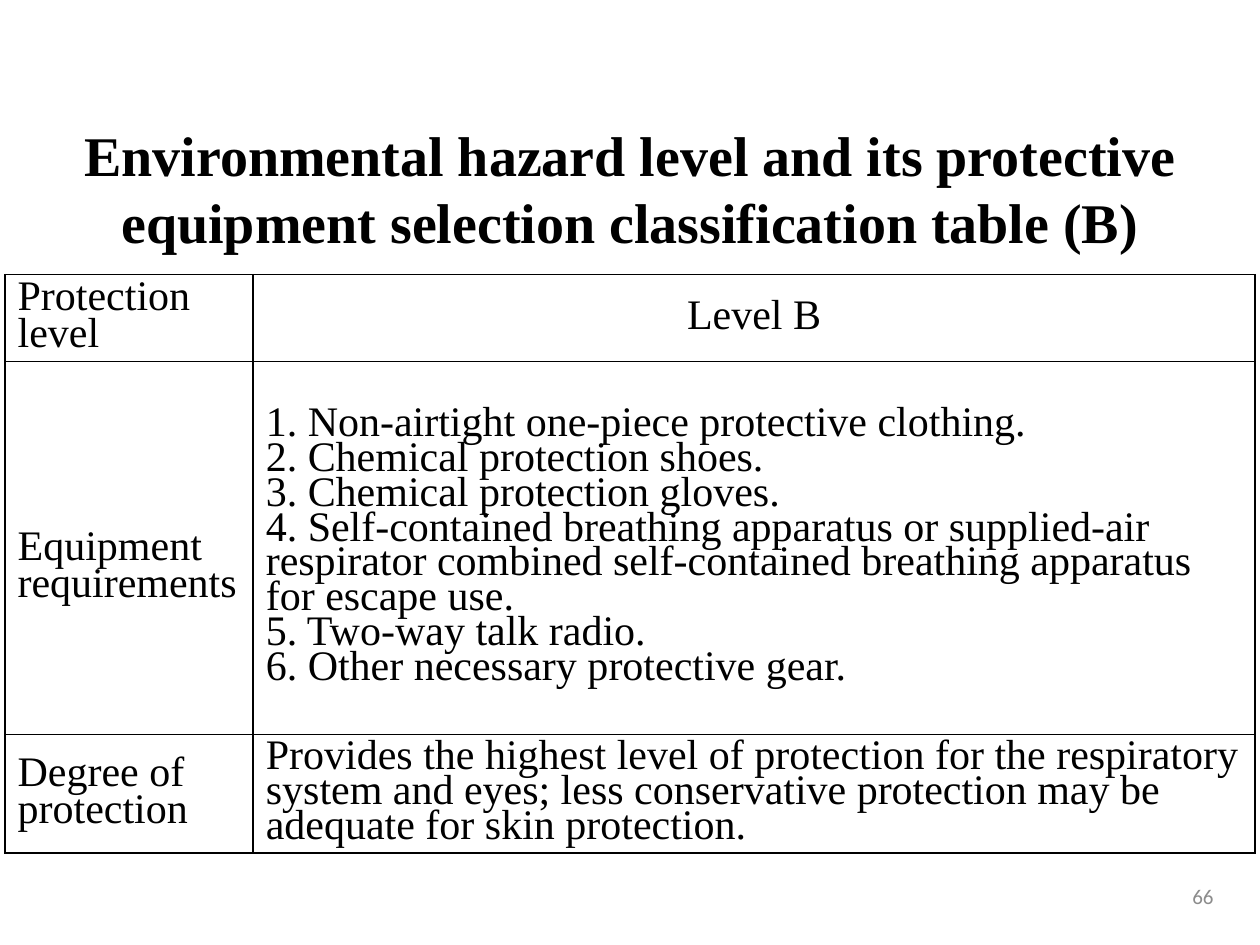
from lxml import etree
from pptx import Presentation
from pptx.dml.color import RGBColor
from pptx.enum import text as t
from pptx.oxml import ns
from pptx.util import Inches, Pt

BLACK = RGBColor(0, 0, 0)
GREY = RGBColor(0x8C, 0x8C, 0x8C)
SERIF = "Times New Roman"
LEFT, CENTER, RIGHT = t.PP_ALIGN.LEFT, t.PP_ALIGN.CENTER, t.PP_ALIGN.RIGHT
MIDDLE, BOTTOM = t.MSO_ANCHOR.MIDDLE, t.MSO_ANCHOR.BOTTOM

TITLE = ("Environmental hazard level and its protective "
         "equipment selection classification table (B)")
GEAR = [
    " Non-airtight one-piece protective clothing.",
    " Chemical protection shoes.",
    " Chemical protection gloves.",
    " Self-contained breathing apparatus or supplied-air respirator "
    "combined self-contained breathing apparatus for escape use.",
    " Two-way talk radio.",
    " Other necessary protective gear.",
]
DEGREE = ("Provides the highest level of protection for the respiratory system "
          "and eyes; less conservative protection may be adequate for skin protection.")
ROWS = [
    [(["Protection level"], {"spacing": 0.8}),
     (["Level B"], {"spacing": 0.8, "align": CENTER})],
    [(["Equipment requirements"], {"spacing": 0.8}),
     (GEAR, {"spacing": 0.75, "numbered": True})],
    [(["Degree of protection"], {"spacing": 0.8}),
     ([DEGREE], {"spacing": 0.75})],
]
COL_WIDTHS = [1.97, 7.95]
ROW_HEIGHTS = [0.69, 2.96, 0.94]
PAGE_NUMBER = "66"


def write(tf, lines, size=24, font=SERIF, color=BLACK, bold=False,
          align=LEFT, spacing=1.0, numbered=False):
    for i, line in enumerate(lines):
        p = tf.paragraphs[0] if i == 0 else tf.add_paragraph()
        p.alignment = align
        p.line_spacing = spacing
        if numbered:
            pPr = p._p.get_or_add_pPr()
            pPr.set("marL", "0")
            pPr.set("indent", "0")
            etree.SubElement(pPr, ns.qn("a:buFont"), typeface="+mj-lt")
            etree.SubElement(pPr, ns.qn("a:buAutoNum"), type="arabicPeriod")
        r = p.add_run()
        r.text = line
        r.font.name, r.font.size, r.font.bold = font, Pt(size), bold
        r.font.color.rgb = color


def add_borders(cell):
    tcPr = cell._tc.get_or_add_tcPr()
    for i, side in enumerate(("lnL", "lnR", "lnT", "lnB")):
        ln = etree.Element(ns.qn(f"a:{side}"), w=str(Pt(1)))
        fill = etree.SubElement(ln, ns.qn("a:solidFill"))
        etree.SubElement(fill, ns.qn("a:srgbClr"), val=str(BLACK))
        tcPr.insert(i, ln)


def main():
    prs = Presentation()
    prs.slide_width, prs.slide_height = Inches(10), Inches(7.5)
    s = prs.slides.add_slide(prs.slide_layouts[5])

    title = s.shapes.title
    title.left, title.top = Inches(0.28), Inches(1.36)
    title.width, title.height = Inches(9.45), Inches(0.71)
    tf = title.text_frame
    tf.word_wrap = True
    tf.auto_size = t.MSO_AUTO_SIZE.NONE
    tf.vertical_anchor = BOTTOM
    write(tf, [TITLE], size=32, bold=True, align=CENTER)

    table = s.shapes.add_table(
        len(ROWS), len(COL_WIDTHS), Inches(0.04), Inches(2.18),
        Inches(sum(COL_WIDTHS)), Inches(sum(ROW_HEIGHTS))).table
    table.first_row = table.horz_banding = False
    for col, width in zip(table.columns, COL_WIDTHS):
        col.width = Inches(width)
    for row, height, contents in zip(table.rows, ROW_HEIGHTS, ROWS):
        row.height = Inches(height)
        for cell, (lines, style) in zip(row.cells, contents):
            cell.vertical_anchor = MIDDLE
            cell.fill.background()
            add_borders(cell)
            write(cell.text_frame, lines, **style)
    table.cell(1, 0).margin_top = Inches(0.36)

    sp = s.shapes.add_textbox(Inches(7.4), Inches(6.91), Inches(2.33), Inches(0.4))
    tf = sp.text_frame
    tf.word_wrap = True
    tf.vertical_anchor = MIDDLE
    write(tf, [PAGE_NUMBER], size=12, font="Calibri", color=GREY, align=RIGHT)

    prs.save("out.pptx")


if __name__ == "__main__":
    main()
